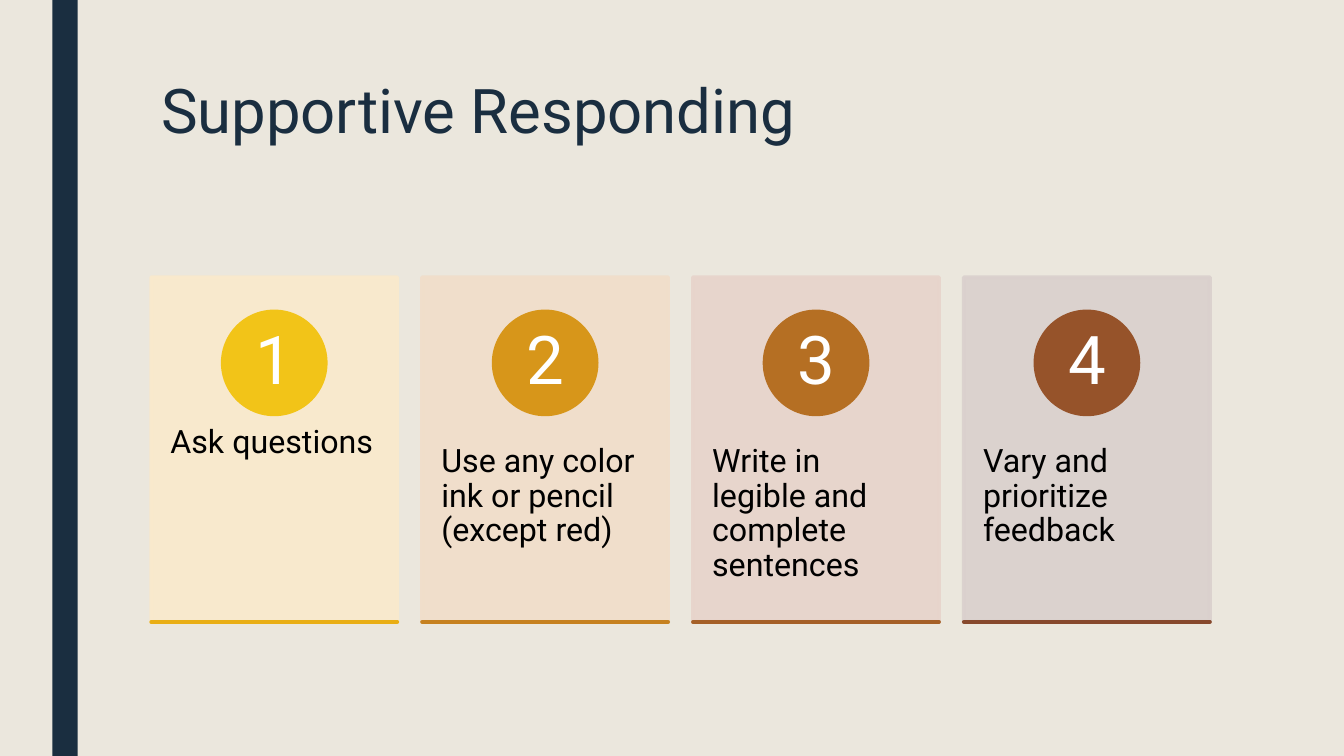
from lxml import etree
from pptx import Presentation
from pptx.dml.color import RGBColor
from pptx.enum.shapes import MSO_CONNECTOR, MSO_SHAPE
from pptx.enum.text import MSO_ANCHOR, PP_ALIGN
from pptx.oxml.ns import qn
from pptx.util import Inches, Pt

RECT, OVAL = MSO_SHAPE.RECTANGLE, MSO_SHAPE.OVAL
STRAIGHT = MSO_CONNECTOR.STRAIGHT
TOP, MIDDLE = MSO_ANCHOR.TOP, MSO_ANCHOR.MIDDLE
LEFT, CENTER = PP_ALIGN.LEFT, PP_ALIGN.CENTER

FONT = "Roboto"
LINE_WIDTH = Pt(2.75)
CREAM = RGBColor(0xEB, 0xE7, 0xDD)
NAVY = RGBColor(0x1A, 0x2E, 0x40)
BLACK = RGBColor(0x00, 0x00, 0x00)
WHITE = RGBColor(0xFF, 0xFF, 0xFF)
PANELS = [RGBColor(0xFA, 0xEA, 0xCC), RGBColor(0xF1, 0xDE, 0xCA),
          RGBColor(0xE7, 0xD4, 0xCB), RGBColor(0xDA, 0xD0, 0xCD)]
BADGES = [RGBColor(0xF2, 0xC4, 0x18), RGBColor(0xD7, 0x96, 0x1A),
          RGBColor(0xB5, 0x6F, 0x23), RGBColor(0x96, 0x53, 0x2A)]
RULES = [RGBColor(0xE9, 0xAE, 0x14), RGBColor(0xC6, 0x81, 0x1F),
         RGBColor(0xA5, 0x60, 0x27), RGBColor(0x87, 0x49, 0x2C)]
TIPS = ["Ask questions",
        "Use any color ink or pencil (except red)",
        "Write in legible and complete sentences",
        "Vary and prioritize feedback"]


def add_text(s, text, x, y, w, h, size, color, align=LEFT, anchor=TOP,
             inset=(0.1, 0.05), spacing=0.9):
    """Add a wrapped one-paragraph text box."""
    tf = s.shapes.add_textbox(Inches(x), Inches(y), Inches(w), Inches(h)).text_frame
    tf.word_wrap = True
    tf.vertical_anchor = anchor
    tf.margin_left = tf.margin_right = Inches(inset[0])
    tf.margin_top = tf.margin_bottom = Inches(inset[1])
    p = tf.paragraphs[0]
    p.alignment, p.line_spacing = align, spacing
    r = p.add_run()
    r.text = text
    r.font.name, r.font.size = FONT, Pt(size)
    r.font.color.rgb = color


def add_block(s, kind, x, y, w, h, color, outlined=True, alpha=None):
    """Add a flat shape in one colour, optionally see-through."""
    sp = s.shapes.add_shape(kind, Inches(x), Inches(y), Inches(w), Inches(h))
    sp.shadow.inherit = False
    sp.fill.solid()
    sp.fill.fore_color.rgb = color
    if outlined:
        sp.line.color.rgb = color
        sp.line.width = LINE_WIDTH
    else:
        sp.line.fill.background()
    if alpha is not None:
        for clr in sp._element.spPr.iter(qn("a:srgbClr")):
            etree.SubElement(clr, qn("a:alpha")).set("val", str(alpha * 1000))


def add_rule(s, x, y, w, color):
    """Add a horizontal line with round ends."""
    line = s.shapes.add_connector(STRAIGHT, Inches(x), Inches(y), Inches(x + w), Inches(y))
    line.line.color.rgb = color
    line.line.width = LINE_WIDTH
    spPr = line._element.spPr
    spPr.find(qn("a:ln")).set("cap", "rnd")
    etree.SubElement(spPr, qn("a:effectLst"))


def add_card(s, number, tip, x, y, w, h, panel, badge, rule):
    """Place a numbered tip card in the given box."""
    size, digit = 1.02, 0.72
    badge_x, badge_y = x + (w - size) / 2, y + 0.34
    pad = (size - digit) / 2
    add_block(s, RECT, x, y, w, h, panel, alpha=90)
    add_text(s, tip, x, y + 1.3, w, 2.05, 23, BLACK, inset=(0.19, 0.36))
    add_block(s, OVAL, badge_x, badge_y, size, size, badge)
    add_text(s, str(number), badge_x + pad, badge_y + pad, digit, digit, 48, WHITE,
             align=CENTER, anchor=MIDDLE, inset=(0.08, 0.01))
    add_rule(s, x, y + h, w, rule)


def add_cards(s, x, y, w, h):
    """Spread the cards evenly across the given box."""
    card_w = 2.44
    pitch = (w - card_w) / (len(TIPS) - 1)
    for i, (tip, panel, badge, rule) in enumerate(zip(TIPS, PANELS, BADGES, RULES)):
        add_card(s, i + 1, tip, x + i * pitch, y, card_w, h, panel, badge, rule)


def main():
    """Build and save the slide."""
    prs = Presentation()
    prs.slide_width, prs.slide_height = Inches(13.33), Inches(7.5)
    s = prs.slides.add_slide(prs.slide_layouts[6])
    s.background.fill.solid()
    s.background.fill.fore_color.rgb = CREAM
    add_block(s, RECT, 0.52, 0, 0.25, 7.5, NAVY, outlined=False)
    add_text(s, "Supportive Responding", 1.5, 0.75, 10.5, 1.62, 44, NAVY, spacing=0.89)
    add_cards(s, 1.5, 2.75, 10.5, 3.42)
    prs.save("out.pptx")


if __name__ == "__main__":
    main()
